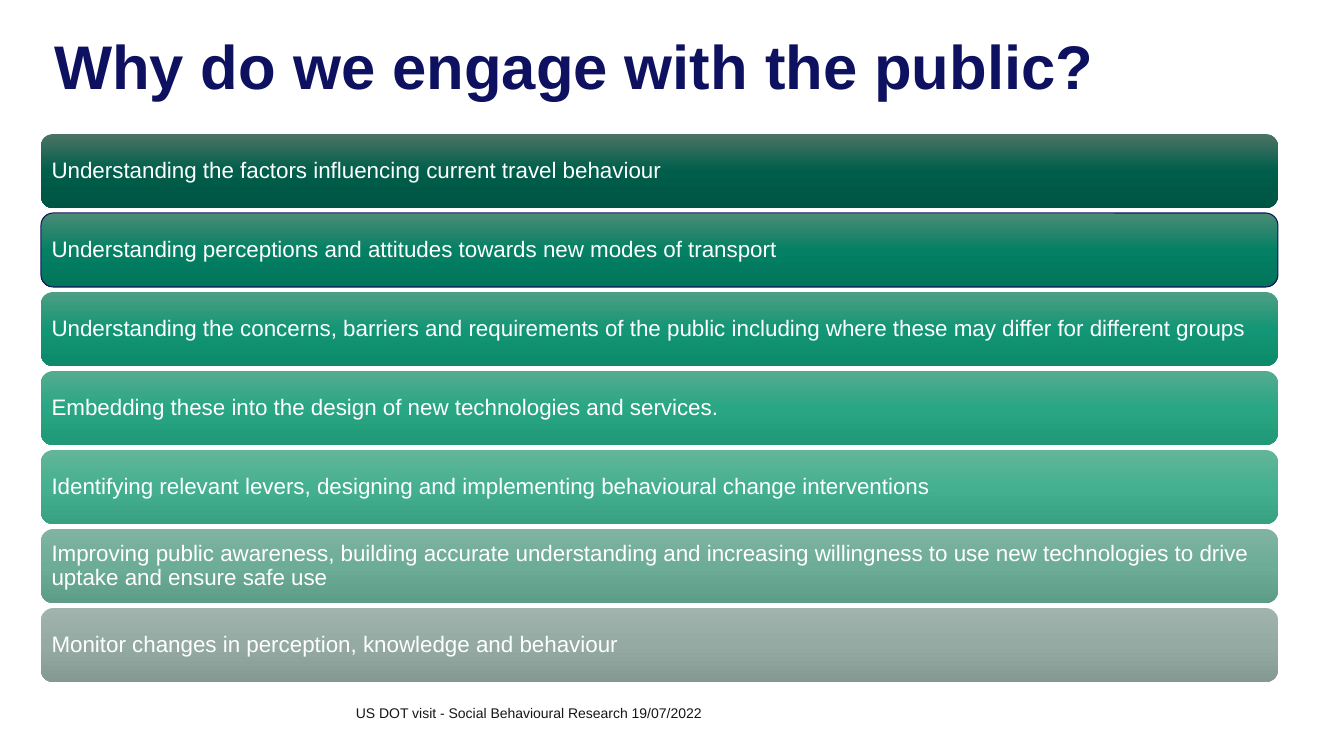
from copy import deepcopy

from pptx import Presentation
from pptx.dml.color import RGBColor
from pptx.enum.shapes import MSO_SHAPE as Shape
from pptx.enum.text import MSO_ANCHOR as Anchor, MSO_AUTO_SIZE as AutoSize, PP_ALIGN as Align
from pptx.util import Pt

# Content
TITLE = "Why do we engage with the public?"
FOOTER = "US DOT visit - Social Behavioural Research 19/07/2022"
# Each reason: wording, then gradient colours from top to bottom
REASONS = [
    ("Understanding the factors influencing current travel behaviour",
     ("4B7365", "005E4B", "005443")),
    ("Understanding perceptions and attitudes towards new modes of transport",
     ("4B8B75", "048064", "00755A")),
    ("Understanding the concerns, barriers and requirements of the public "
     "including where these may differ for different groups",
     ("4D9E83", "139675", "0C8A6A")),
    ("Embedding these into the design of new technologies and services.",
     ("54AC90", "29A683", "1F9977")),
    ("Identifying relevant levers, designing and implementing behavioural change interventions",
     ("63B69A", "44B08F", "38A181")),
    ("Improving public awareness, building accurate understanding and increasing "
     "willingness to use new technologies to drive uptake and ensure safe use",
     ("81B3A2", "6DAD98", "5D9D88")),
    ("Monitor changes in perception, knowledge and behaviour",
     ("A1B3AD", "94AAA3", "839991")),
]
OUTLINED = 1  # index of the bar with an outline
COLORS = {"navy": "0E115F", "ink": "161616", "white": "FFFFFF"}
FONT = "Arial"

# Layout in px
EMU_PER_PX = 914400 / 100.8
PAGE_WIDTH, PAGE_HEIGHT = 1344, 756
BAR_LEFT, BAR_TOP, BAR_WIDTH, BAR_HEIGHT, BAR_PITCH = 41, 134, 1237, 74, 79
BAR_INSET = 7


def px(value):
    return round(value * EMU_PER_PX)


def rgb(value):
    return RGBColor.from_string(value)


def write(frame, text, size, color, bold=False, spacing=None, inset=None):
    frame.text = text
    frame.word_wrap = True
    frame.auto_size = AutoSize.NONE
    if inset is not None:
        frame.margin_left = frame.margin_right = px(inset)
        frame.margin_top = frame.margin_bottom = px(inset)
    para = frame.paragraphs[0]
    para.alignment = Align.LEFT
    if spacing:
        para.line_spacing = spacing
    font = para.runs[0].font
    font.name, font.size, font.bold = FONT, Pt(size), bold
    font.color.rgb = rgb(color)


def fill_downwards(fill, colors):
    fill.gradient()
    fill.gradient_angle = 270
    stop_list = fill._fill._gradFill.gsLst
    stop_list.append(deepcopy(stop_list[-1]))
    for index, (stop, color) in enumerate(zip(fill.gradient_stops, colors)):
        stop.position = index / (len(colors) - 1)
        stop.color.rgb = rgb(color)


deck = Presentation()
deck.slide_width, deck.slide_height = px(PAGE_WIDTH), px(PAGE_HEIGHT)
page = deck.slides.add_slide(deck.slide_layouts.get_by_name("Title Only"))

# Title
title = page.shapes.title
title.left, title.top, title.width, title.height = map(px, (54, 36, 1237, 138))
title.text_frame.vertical_anchor = Anchor.TOP
write(title.text_frame, TITLE, 44, COLORS["navy"], bold=True, spacing=0.9, inset=0)

# Footer
footer = page.shapes.add_textbox(*map(px, (346, 700, 525, 31)))
write(footer.text_frame, FOOTER, 10, COLORS["ink"])

# Reason bars
for row, (reason, gradient) in enumerate(REASONS):
    top = BAR_TOP + row * BAR_PITCH
    bar = page.shapes.add_shape(
        Shape.ROUNDED_RECTANGLE, *map(px, (BAR_LEFT, top, BAR_WIDTH, BAR_HEIGHT)))
    bar.shadow.inherit = False
    fill_downwards(bar.fill, gradient)
    if row == OUTLINED:
        bar.line.color.rgb = rgb(COLORS["navy"])
        bar.line.width = Pt(0.75)
    else:
        bar.line.fill.background()
    bar.text_frame.vertical_anchor = Anchor.MIDDLE
    write(bar.text_frame, reason, 16, COLORS["white"], spacing=0.9, inset=BAR_INSET)

deck.save("out.pptx")
